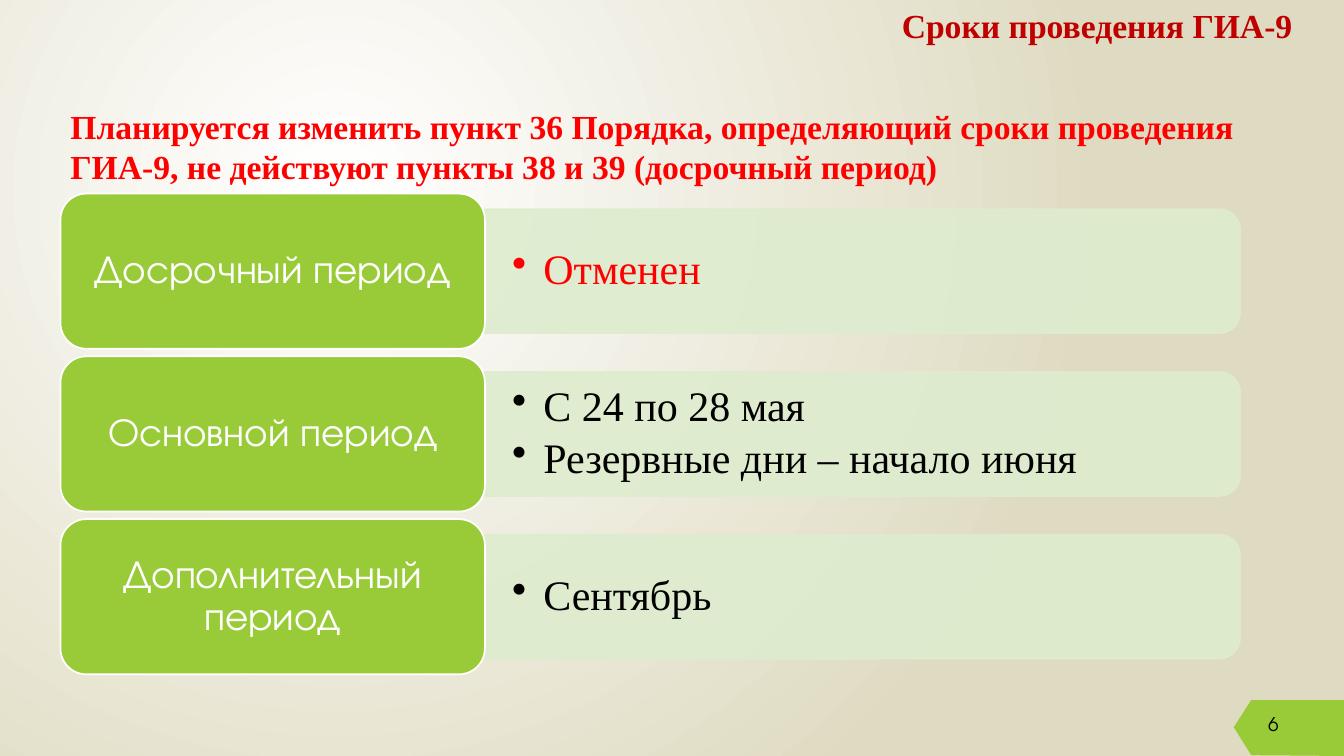
from lxml import etree
from pptx import Presentation
from pptx.dml.color import RGBColor
from pptx.enum.shapes import MSO_SHAPE as Kind
from pptx.enum.text import MSO_ANCHOR as Anchor, PP_ALIGN as Align
from pptx.oxml.ns import qn
from pptx.util import Inches, Pt

WHITE = RGBColor(0xFF, 0xFF, 0xFF)
BLACK = RGBColor(0, 0, 0)
SAND = RGBColor(0xDF, 0xDB, 0xC2)
GREEN = RGBColor(0x99, 0xCB, 0x38)
PALE = RGBColor(0xDE, 0xEC, 0xCE)
RED = RGBColor(0xFF, 0, 0)
DARK = RGBColor(0xC0, 0, 0)
SERIF = "Times New Roman"
SANS = "TeX Gyre Adventor"

deck = Presentation()
deck.slide_width, deck.slide_height = Inches(13.33), Inches(7.5)
W, H = deck.slide_width, deck.slide_height
slide = deck.slides.add_slide(deck.slide_layouts[6])
shapes = slide.shapes


def area(x, y, w, h):
    """Turn percent of the slide's size into lengths."""
    return [int(n * side / 100) for n, side in zip((x, y, w, h), (W, H, W, H))]


def write(para, text, font, size, color, bold=False):
    run = para.add_run()
    run.text = text
    run.font.name, run.font.size, run.font.bold = font, Pt(size), bold
    run.font.color.rgb = color


# Background: round gradient with its centre in the upper left
back = slide.background.fill
back.gradient()
for stop, color in zip(back.gradient_stops, (WHITE, SAND)):
    stop.color.rgb = color
grad = slide.element.find(".//" + qn("a:gradFill"))
grad.remove(grad.find(qn("a:lin")))
way = etree.SubElement(grad, qn("a:path"), path="circle")
etree.SubElement(way, qn("a:fillToRect"), l="50000", t="50000", r="100000", b="100000")

# Page tag
edge = [(91.8, 96.2), (93.1, 92.6), (100, 92.6), (100, 100), (93.1, 99.9)]
dots = [area(x, y, 0, 0)[:2] for x, y in edge]
pen = shapes.build_freeform(*dots[0])
pen.add_line_segments(dots[1:])
tag = pen.convert_to_shape()
tag.shadow.inherit = False
tag.fill.solid()
tag.fill.fore_color.rgb = GREEN
tag.line.fill.background()

# Page number, title and lead text
lead = ("Планируется изменить пункт 36 Порядка, определяющий сроки проведения "
        "ГИА-9, не действуют пункты 38 и 39 (досрочный период)")
notes = [
    ((93.62, 93.6, 6.38, 5.33), "6", SANS, 13.5, BLACK, False, Align.LEFT),
    ((63.25, 0, 36.75, 8.8), "Сроки проведения ГИА-9", SERIF, 24, DARK, True, Align.CENTER),
    ((4.5, 13.33, 92.35, 12.13), lead, SERIF, 24, RED, True, Align.LEFT),
]
for spot, text, font, size, color, bold, align in notes:
    frame = shapes.add_textbox(*area(*spot)).text_frame
    frame.word_wrap = True
    frame.paragraphs[0].alignment = align
    write(frame.paragraphs[0], text, font, size, color, bold)

# Periods: one row each, with a bar, its list and a label
rows = [
    ("Досрочный период", ["Отменен"], RED),
    ("Основной период", ["С 24 по 28 мая", "Резервные дни – начало июня"], BLACK),
    ("Дополнительный период", ["Сентябрь"], BLACK),
]
LEFT, SPLIT, FIRST, STEP = 4.5, 36.08, 35.87, 21.53
LONG, THICK, TALL = 56.19, 16.4, 20.53

for i, (name, items, color) in enumerate(rows):
    mid = FIRST + i * STEP

    # Bar: an upright shape turned on its side
    x, y, w, h = area(SPLIT, mid - THICK / 2, LONG, THICK)
    bar = shapes.add_shape(Kind.ROUND_2_SAME_RECTANGLE,
                           x + (w - h) // 2, y + (h - w) // 2, h, w)
    bar.rotation = 90
    bar.shadow.inherit = False
    bar.fill.solid()
    bar.fill.fore_color.rgb = PALE
    bar.line.color.rgb = PALE
    bar.line.width = Pt(1.25)
    for tint in bar.element.spPr.iter(qn("a:srgbClr")):
        etree.SubElement(tint, qn("a:alpha"), val="90000")

    # List
    frame = shapes.add_textbox(*area(SPLIT, mid - 7.4, 55.74, 14.8)).text_frame
    frame.word_wrap = True
    frame.vertical_anchor = Anchor.MIDDLE
    frame.margin_left = frame.margin_right = Inches(0.27)
    frame.margin_top = frame.margin_bottom = Inches(0.14)
    for k, item in enumerate(items):
        para = frame.add_paragraph() if k else frame.paragraphs[0]
        props = para._p.get_or_add_pPr()
        props.set("marL", str(Inches(0.31)))
        props.set("indent", str(-Inches(0.31)))
        etree.SubElement(props, qn("a:buChar"), char="•")
        para.line_spacing = 0.9
        para.space_after = Pt(4.5)
        write(para, item, SERIF, 30, color)

    # Label
    label = shapes.add_shape(Kind.ROUNDED_RECTANGLE,
                             *area(LEFT, mid - TALL / 2, SPLIT - LEFT, TALL))
    label.shadow.inherit = False
    label.fill.solid()
    label.fill.fore_color.rgb = GREEN
    label.line.color.rgb = WHITE
    label.line.width = Pt(1.25)
    frame = label.text_frame
    frame.word_wrap = True
    frame.vertical_anchor = Anchor.MIDDLE
    frame.margin_left = frame.margin_right = Inches(0.12)
    frame.margin_top = frame.margin_bottom = Inches(0.06)
    para = frame.paragraphs[0]
    para.alignment = Align.CENTER
    para.line_spacing = 0.9
    write(para, name, SANS, 28, WHITE)

deck.save("out.pptx")
